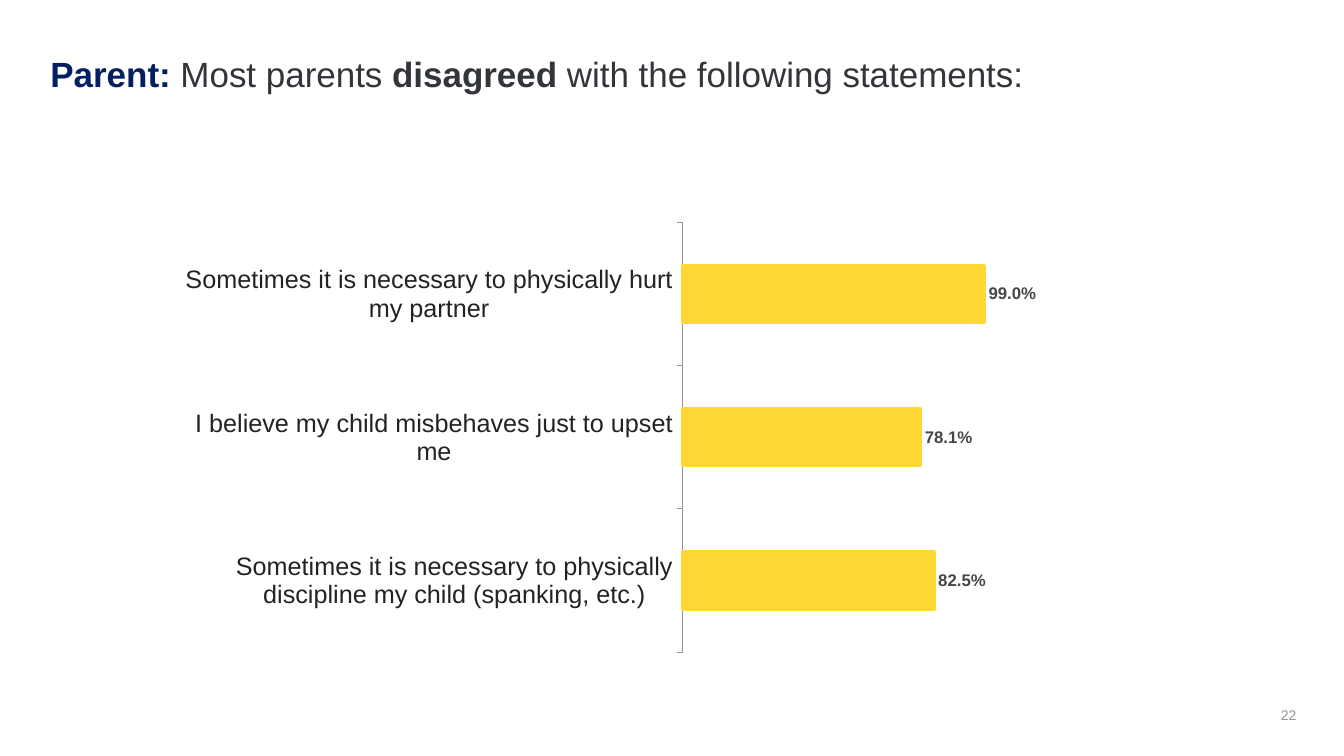
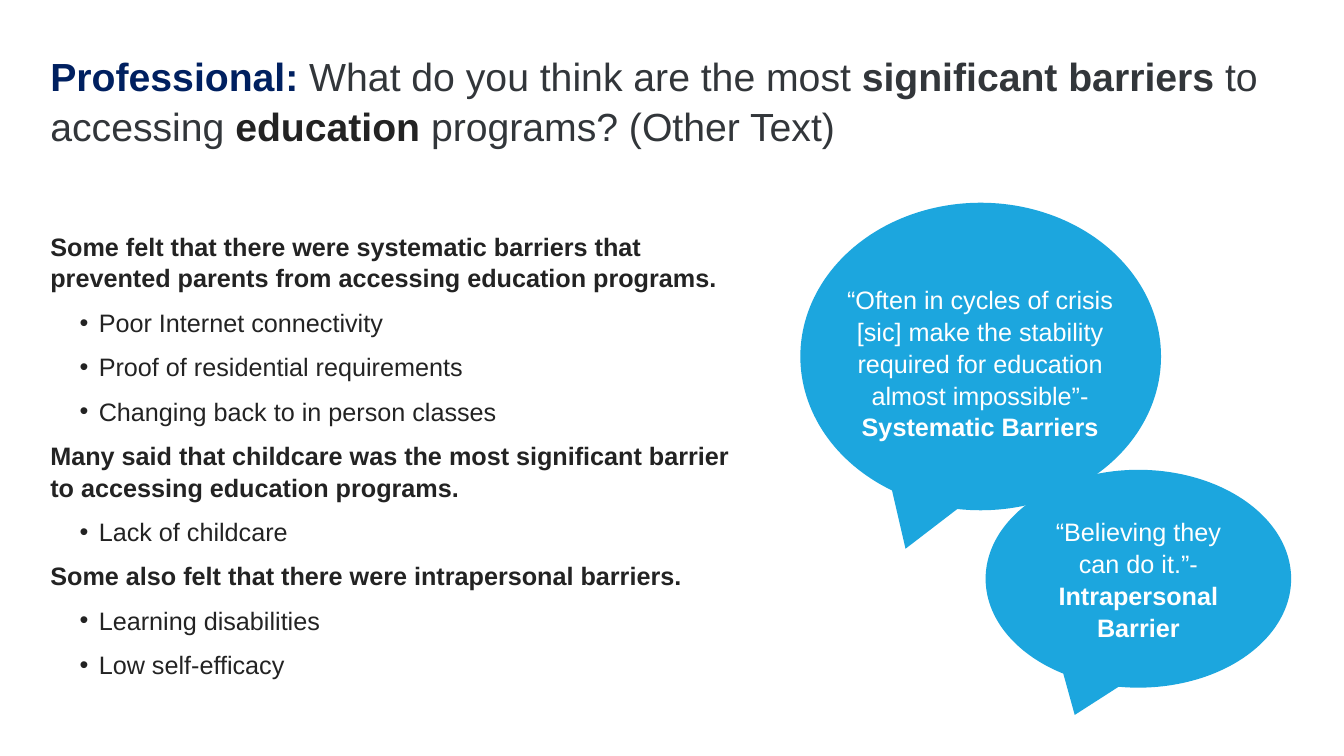
from dataclasses import dataclass

from lxml import etree
from pptx import Presentation
from pptx.chart import data as chart_data
from pptx.dml import color
from pptx.enum import chart as ch, shapes, text
from pptx.oxml import ns
from pptx.util import Cm, Pt


@dataclass(frozen=True)
class Theme:
    font: str = "Arial"
    navy: str = "002060"
    slate: str = "32363A"
    ink: str = "232323"
    label: str = "464646"
    axis: str = "949494"
    yellow: str = "FDD835"
    blue: str = "1CA6DE"
    white: str = "FFFFFF"
    body: int = 18
    value: int = 12
    page: int = 10
    leading: float = 1.05
    before: int = 9


THEME = Theme()
TITLE_BOX = (1.27, 1.14, 31.65, 2.34)
PAGE_BOX = (25.3, 17.73, 7.62, 0.56)

STATEMENTS = [
    ("Sometimes it is necessary to physically discipline my child (spanking, etc.)", 0.825),
    ("I believe my child misbehaves just to upset me", 0.781),
    ("Sometimes it is necessary to physically hurt my partner", 0.99),
]
BARRIERS = [
    ("Some felt that there were systematic barriers that prevented parents from "
     "accessing education programs.",
     ["Poor Internet connectivity", "Proof of residential requirements",
      "Changing back to in person classes"]),
    ("Many said that childcare was the most significant barrier to accessing "
     "education programs.",
     ["Lack of childcare"]),
    ("Some also felt that there were intrapersonal barriers.",
     ["Learning disabilities", "Low self-efficacy"]),
]


def rgb(value):
    return color.RGBColor.from_string(value)


def style_font(font, size, tint, bold=False):
    font.name, font.size, font.bold = THEME.font, Pt(size), bold
    font.color.rgb = rgb(tint)


def write_runs(paragraph, parts, size):
    """Fill a paragraph from (wording, colour, bold) parts."""
    paragraph.line_spacing = THEME.leading
    for wording, tint, bold in parts:
        run = paragraph.add_run()
        run.text = wording
        style_font(run.font, size, tint, bold)


def add_text_box(slide, box):
    frame = slide.shapes.add_textbox(*map(Cm, box)).text_frame
    frame.word_wrap = True
    return frame


def add_titled_slide(deck, size, parts):
    slide = deck.slides.add_slide(deck.slide_layouts[5])
    title = slide.shapes.title
    title.left, title.top, title.width, title.height = map(Cm, TITLE_BOX)
    frame = title.text_frame
    frame.auto_size = text.MSO_AUTO_SIZE.NONE
    frame.vertical_anchor = text.MSO_ANCHOR.TOP
    frame.margin_left = 0
    frame.paragraphs[0].alignment = text.PP_ALIGN.LEFT
    write_runs(frame.paragraphs[0], parts, size)
    return slide


def add_page_number(slide, number):
    frame = add_text_box(slide, PAGE_BOX)
    frame.margin_top = frame.margin_bottom = 0
    frame.vertical_anchor = text.MSO_ANCHOR.MIDDLE
    frame.paragraphs[0].alignment = text.PP_ALIGN.RIGHT
    write_runs(frame.paragraphs[0], [(str(number), THEME.axis, False)], THEME.page)


def add_statement_chart(slide, box):
    data = chart_data.CategoryChartData(number_format="0.0%")
    data.categories = [statement for statement, _ in STATEMENTS]
    data.add_series("Series 1", [share for _, share in STATEMENTS])
    chart = slide.shapes.add_chart(
        ch.XL_CHART_TYPE.BAR_CLUSTERED, *map(Cm, box), data).chart
    chart.has_legend = chart.has_title = False
    style_font(chart.font, THEME.body, THEME.label)

    shares = chart.value_axis
    shares.minimum_scale, shares.maximum_scale = 0, 1.2
    shares.has_major_gridlines = shares.visible = False

    statements = chart.category_axis
    statements.major_tick_mark = ch.XL_TICK_MARK.OUTSIDE
    statements.format.line.color.rgb = rgb(THEME.axis)
    statements.format.line.width = Pt(0.75)
    style_font(statements.tick_labels.font, THEME.body, THEME.ink)

    plot = chart.plots[0]
    plot.gap_width, plot.vary_by_categories = 150, False
    bars = plot.series[0].format
    bars.fill.solid()
    bars.fill.fore_color.rgb = bars.line.color.rgb = rgb(THEME.yellow)
    bars.line.width = Pt(2.25)

    plot.has_data_labels = True
    labels = plot.data_labels
    labels.show_value = True
    labels.number_format, labels.number_format_is_linked = "0.0%", False
    labels.position = ch.XL_LABEL_POSITION.OUTSIDE_END
    style_font(labels.font, THEME.value, THEME.label, True)


def set_bullet(paragraph):
    properties = paragraph._p.get_or_add_pPr()
    properties.set("lvl", "1")
    properties.set("marL", str(Cm(1.22)))
    properties.set("indent", str(Cm(-0.48)))
    etree.SubElement(properties, ns.qn("a:buFont")).set("typeface", THEME.font)
    etree.SubElement(properties, ns.qn("a:buChar")).set("char", "•")


def add_barrier_list(slide, box):
    frame = add_text_box(slide, box)
    frame.margin_left = 0
    lines = [(line, line is finding)
             for finding, examples in BARRIERS for line in (finding, *examples)]
    for index, (line, is_finding) in enumerate(lines):
        paragraph = frame.add_paragraph() if index else frame.paragraphs[0]
        if not is_finding:
            set_bullet(paragraph)
        if index:
            paragraph.space_before = Pt(THEME.before)
        write_runs(paragraph, [(line, THEME.ink, is_finding)], THEME.body)


def add_bubble(slide, box):
    bubble = slide.shapes.add_shape(shapes.MSO_SHAPE.OVAL_CALLOUT, *map(Cm, box))
    bubble.shadow.inherit = False
    bubble.fill.solid()
    bubble.fill.fore_color.rgb = rgb(THEME.blue)
    bubble.line.fill.background()
    return bubble.text_frame


def write_quote(frame, quote, barrier):
    frame.word_wrap = True
    frame.paragraphs[0].alignment = text.PP_ALIGN.CENTER
    write_runs(frame.paragraphs[0],
               [(quote, THEME.white, False), (barrier, THEME.white, True)], THEME.body)


def add_quotes(slide, left, top):
    """Place two overlapping speech bubbles from the given corner."""
    add_bubble(slide, (left, top, 9.09, 7.75))
    # The first quote is wider than the text area inside its bubble.
    systematic = add_text_box(slide, (left + 0.68, top + 1.9, 7.7, 4.11))
    write_quote(systematic,
                "“Often in cycles of crisis [sic] make the stability required for "
                "education almost impossible”-", "Systematic Barriers")
    intrapersonal = add_bubble(slide, (left + 4.67, top + 6.73, 7.7, 5.49))
    intrapersonal.vertical_anchor = text.MSO_ANCHOR.MIDDLE
    write_quote(intrapersonal, "“Believing they can do it.”- ", "Intrapersonal Barrier")


def build_parent_slide(deck):
    slide = add_titled_slide(deck, 25, [
        ("Parent: ", THEME.navy, True),
        ("Most parents", THEME.slate, False),
        (" disagreed ", THEME.slate, True),
        ("with the following statements:", THEME.slate, False),
    ])
    add_page_number(slide, 22)
    add_statement_chart(slide, (4.22, 5.38, 22.66, 11.28))


def build_professional_slide(deck):
    slide = add_titled_slide(deck, 28, [
        ("Professional: ", THEME.navy, True),
        ("What do you think are the most ", THEME.slate, False),
        ("significant barriers ", THEME.slate, True),
        ("to accessing ", THEME.slate, False),
        ("education ", THEME.ink, True),
        ("programs? (Other Text)", THEME.slate, False),
    ])
    add_barrier_list(slide, (1.27, 5.66, 17.37, 11.53))
    add_quotes(slide, 20.17, 5.11)


def main():
    deck = Presentation()
    deck.slide_width, deck.slide_height = Cm(33.87), Cm(19.05)
    build_parent_slide(deck)
    build_professional_slide(deck)
    deck.save("out.pptx")


if __name__ == "__main__":
    main()
